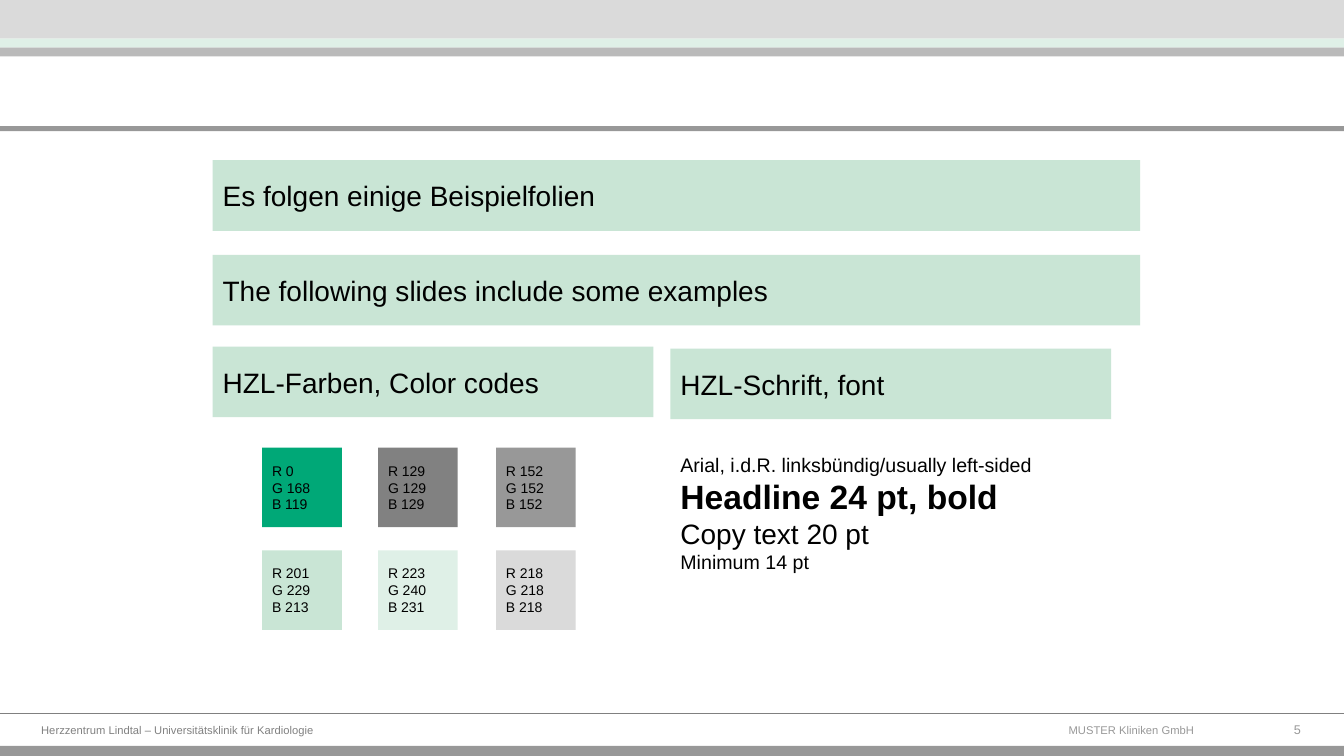
from dataclasses import dataclass

from lxml import etree
from pptx import Presentation
from pptx.dml.color import RGBColor
from pptx.enum.shapes import MSO_CONNECTOR, MSO_SHAPE
from pptx.enum.text import MSO_ANCHOR, PP_ALIGN
from pptx.oxml.ns import qn
from pptx.slide import Slide
from pptx.util import Inches, Pt

RECTANGLE = MSO_SHAPE.RECTANGLE
STRAIGHT = MSO_CONNECTOR.STRAIGHT
TOP, MIDDLE, BOTTOM = MSO_ANCHOR.TOP, MSO_ANCHOR.MIDDLE, MSO_ANCHOR.BOTTOM
LEFT, RIGHT = PP_ALIGN.LEFT, PP_ALIGN.RIGHT

WIDTH, HEIGHT = 13.33, 7.5
COLORS = {
    "black": "000000",
    "dark gray": "818181",
    "rule gray": "808080",
    "gray": "989898",
    "band gray": "BABABA",
    "light gray": "DADADA",
    "mint": "C9E5D5",
    "pale mint": "DFF0E7",
}
SWATCHES = [
    [(0, 168, 119), (129, 129, 129), (152, 152, 152)],
    [(201, 229, 213), (223, 240, 231), (218, 218, 218)],
]
SWATCH_LEFTS = [2.6, 3.75, 4.92]
SWATCH_TOPS = [4.44, 5.46]
SWATCH_SIZE = 0.79


@dataclass
class SlideBuilder:
    """Draws the elements of one slide in a shared style."""

    page: Slide
    font: str = "Arial"

    def add_lines(self, shape, lines, color="black", anchor=MIDDLE, align=LEFT):
        """Fill a shape with lines given as (text, size, bold)."""
        frame = shape.text_frame
        frame.word_wrap = True
        frame.vertical_anchor = anchor
        for index, (text, size, bold) in enumerate(lines):
            para = frame.add_paragraph() if index else frame.paragraphs[0]
            para.alignment = align
            span = para.add_run()
            span.text = text
            span.font.name = self.font
            span.font.size = Pt(size)
            span.font.bold = bold
            span.font.color.rgb = RGBColor.from_string(COLORS[color])

    def block(self, left, top, width, height, fill, lines=()):
        """Add a filled rectangle without outline."""
        box = self.page.shapes.add_shape(
            RECTANGLE, Inches(left), Inches(top), Inches(width), Inches(height))
        box.shadow.inherit = False
        box.fill.solid()
        box.fill.fore_color.rgb = fill
        box.line.fill.background()
        self.add_lines(box, lines)

    def band(self, top, height, color):
        """Add a bar across the whole slide."""
        self.block(0, top, WIDTH, height, RGBColor.from_string(COLORS[color]))

    def heading(self, left, top, width, text):
        """Add a mint heading box."""
        fill = RGBColor.from_string(COLORS["mint"])
        self.block(left, top, width, 0.7, fill, [(text, 20, False)])

    def swatch(self, left, top, rgb):
        """Add a square labelled with its own colour values."""
        lines = [(f"{name} {value}", 10, False) for name, value in zip("RGB", rgb)]
        self.block(left, top, SWATCH_SIZE, SWATCH_SIZE, RGBColor(*rgb), lines)

    def text(self, left, top, width, height, lines, **style):
        """Add a text box."""
        box = self.page.shapes.add_textbox(
            Inches(left), Inches(top), Inches(width), Inches(height))
        self.add_lines(box, lines, **style)

    def rule(self, top, color):
        """Add a thin line across the whole slide."""
        line = self.page.shapes.add_connector(
            STRAIGHT, Inches(0), Inches(top), Inches(WIDTH), Inches(top))
        line.line.color.rgb = RGBColor.from_string(COLORS[color])
        line.line.width = Pt(0.75)
        etree.SubElement(line._element.spPr, qn("a:effectLst"))


def main():
    """Build the slide and save the deck."""
    deck = Presentation()
    deck.slide_width, deck.slide_height = Inches(WIDTH), Inches(HEIGHT)
    builder = SlideBuilder(deck.slides.add_slide(deck.slide_layouts[6]))

    for top, height, color in [
        (0.47, 0.09, "band gray"),
        (0.38, 0.09, "pale mint"),
        (0, 0.38, "light gray"),
        (1.25, 0.05, "gray"),
        (7.4, 0.1, "gray"),
    ]:
        builder.band(top, height, color)

    builder.rule(7.08, "rule gray")
    builder.text(0.31, 7.11, 5.15, 0.25,
                 [("Herzzentrum Lindtal – Universitätsklinik für Kardiologie", 8, False)],
                 color="dark gray", anchor=BOTTOM)
    builder.text(10.5, 7.13, 1.94, 0.26, [("MUSTER Kliniken GmbH", 8, False)],
                 color="gray", anchor=TOP)
    builder.text(12.33, 7.11, 0.67, 0.25, [("5", 9, False)],
                 color="gray", align=RIGHT)

    for left, top, width, text in [
        (2.11, 1.59, 9.2, "Es folgen einige Beispielfolien"),
        (2.11, 2.53, 9.2, "The following slides include some examples"),
        (2.11, 3.44, 4.37, "HZL-Farben, Color codes"),
        (6.65, 3.46, 4.37, "HZL-Schrift, font"),
    ]:
        builder.heading(left, top, width, text)

    for top, row in zip(SWATCH_TOPS, SWATCHES):
        for left, rgb in zip(SWATCH_LEFTS, row):
            builder.swatch(left, top, rgb)

    builder.text(6.65, 4.44, 4.37, 1.55, [
        ("Arial, i.d.R. linksbündig/usually left-sided", 14, False),
        ("Headline 24 pt, bold", 24, True),
        ("Copy text 20 pt", 20, False),
        ("Minimum 14 pt", 14, False),
    ], anchor=TOP)

    deck.save("out.pptx")


if __name__ == "__main__":
    main()
